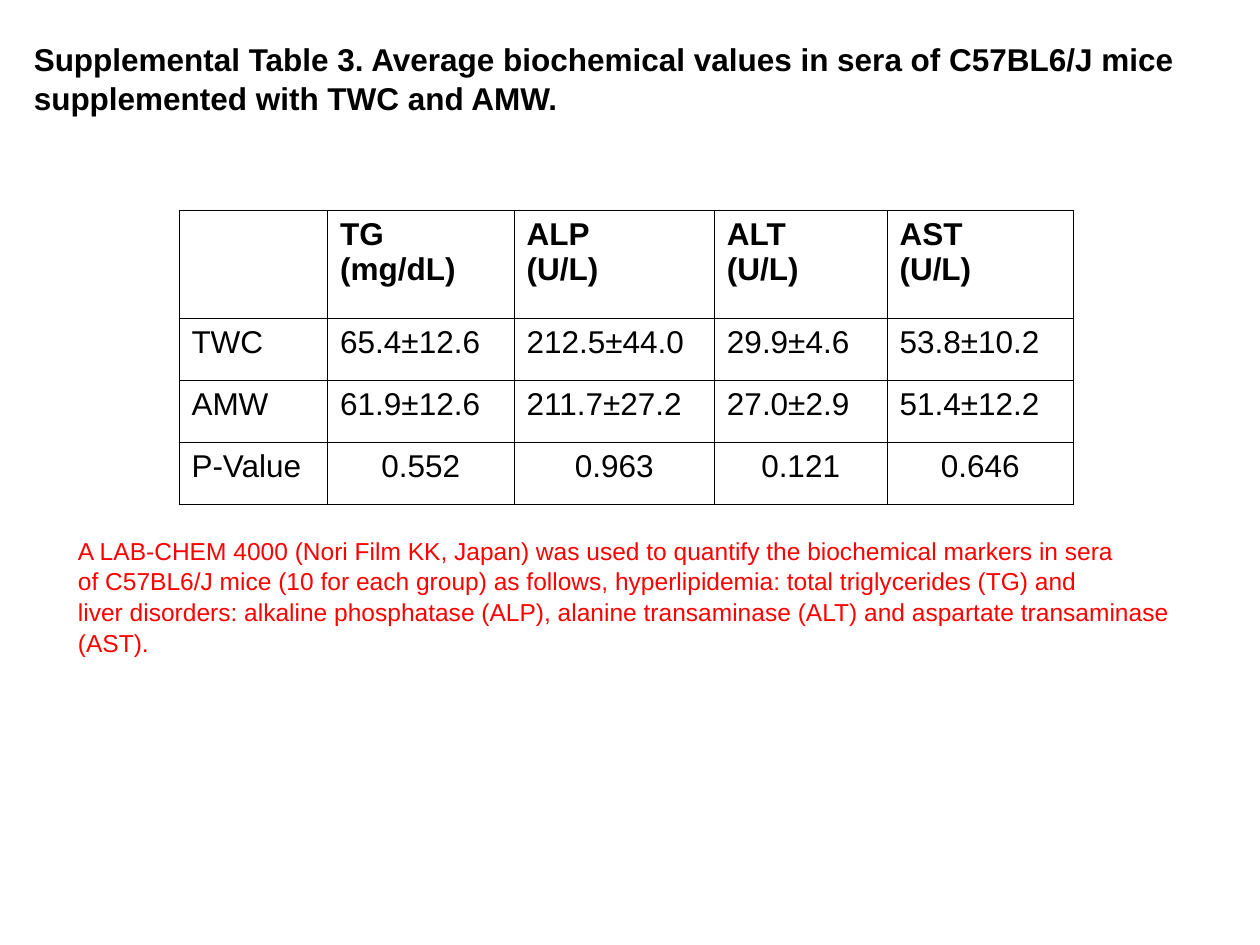
"""Build the slide with the supplemental table of serum values in mice."""
from lxml import etree
from pptx import Presentation
from pptx.dml.color import RGBColor
from pptx.enum.text import PP_ALIGN
from pptx.oxml.ns import qn
from pptx.util import Inches, Pt

FONT = "Arial"
COLORS = {"text": "000000", "note": "FF0000", "border": "000000"}
TITLE = ("Supplemental Table 3. Average biochemical values in sera of C57BL6/J mice "
         "supplemented with TWC and AMW.")
NOTE = [
    "A LAB-CHEM 4000 (Nori Film KK, Japan) was used to quantify the biochemical markers in sera",
    "of C57BL6/J mice (10 for each group) as follows, hyperlipidemia: total triglycerides (TG) and",
    "liver disorders: alkaline phosphatase (ALP), alanine transaminase (ALT) and aspartate transaminase",
    "(AST).",
]
VALUES = [
    ["", "TG\n(mg/dL)", "ALP\n(U/L)", "ALT\n(U/L)", "AST\n(U/L)"],
    ["TWC", "65.4±12.6", "212.5±44.0", "29.9±4.6", "53.8±10.2"],
    ["AMW", "61.9±12.6", "211.7±27.2", "27.0±2.9", "51.4±12.2"],
    ["P-Value", "0.552", "0.963", "0.121", "0.646"],
]
COLUMN_WIDTHS = [1.18, 1.48, 1.59, 1.37, 1.48]
ROW_HEIGHTS = [0.86, 0.49, 0.49, 0.49]


def write(frame, lines, size, color, bold=False, align=PP_ALIGN.LEFT, spacing=None):
    frame.word_wrap = True
    frame.text = "\n".join(lines)
    for paragraph in frame.paragraphs:
        paragraph.alignment = align
        paragraph.line_spacing = spacing
        font = paragraph.font
        font.name, font.size, font.bold = FONT, Pt(size), bold
        font.color.rgb = RGBColor.from_string(COLORS[color])


def add_text(slide, box, *args, **style):
    textbox = slide.shapes.add_textbox(*map(Inches, box))
    write(textbox.text_frame, *args, spacing=1.05, **style)


def add_borders(cell):
    properties = cell._tc.get_or_add_tcPr()
    for position, side in enumerate(("a:lnL", "a:lnR", "a:lnT", "a:lnB")):
        line = etree.Element(qn(side), w=str(Pt(0.5)))
        fill = etree.SubElement(line, qn("a:solidFill"))
        etree.SubElement(fill, qn("a:srgbClr"), val=COLORS["border"])
        properties.insert(position, line)


def add_values(slide):
    table = slide.shapes.add_table(
        len(VALUES), len(COLUMN_WIDTHS), Inches(1.42), Inches(1.67),
        Inches(sum(COLUMN_WIDTHS)), Inches(sum(ROW_HEIGHTS))).table
    table.horz_banding = False
    for column, width in zip(table.columns, COLUMN_WIDTHS):
        column.width = Inches(width)
    for r, (row, height) in enumerate(zip(VALUES, ROW_HEIGHTS)):
        table.rows[r].height = Inches(height)
        for c, value in enumerate(row):
            cell = table.cell(r, c)
            cell.fill.background()
            centred = r == len(VALUES) - 1 and c > 0
            write(cell.text_frame, [value], 18, "text", bold=r == 0,
                  align=PP_ALIGN.CENTER if centred else PP_ALIGN.LEFT)
            add_borders(cell)


def main():
    presentation = Presentation()
    presentation.slide_width, presentation.slide_height = Inches(10), Inches(7.5)
    slide = presentation.slides.add_slide(presentation.slide_layouts[6])
    add_text(slide, (0.17, 0.25, 9.67, 0.71), [TITLE], 18, "text", bold=True)
    add_values(slide)
    add_text(slide, (0.52, 4.19, 8.95, 1.04), NOTE, 14, "note", align=PP_ALIGN.JUSTIFY)
    presentation.save("out.pptx")


if __name__ == "__main__":
    main()
